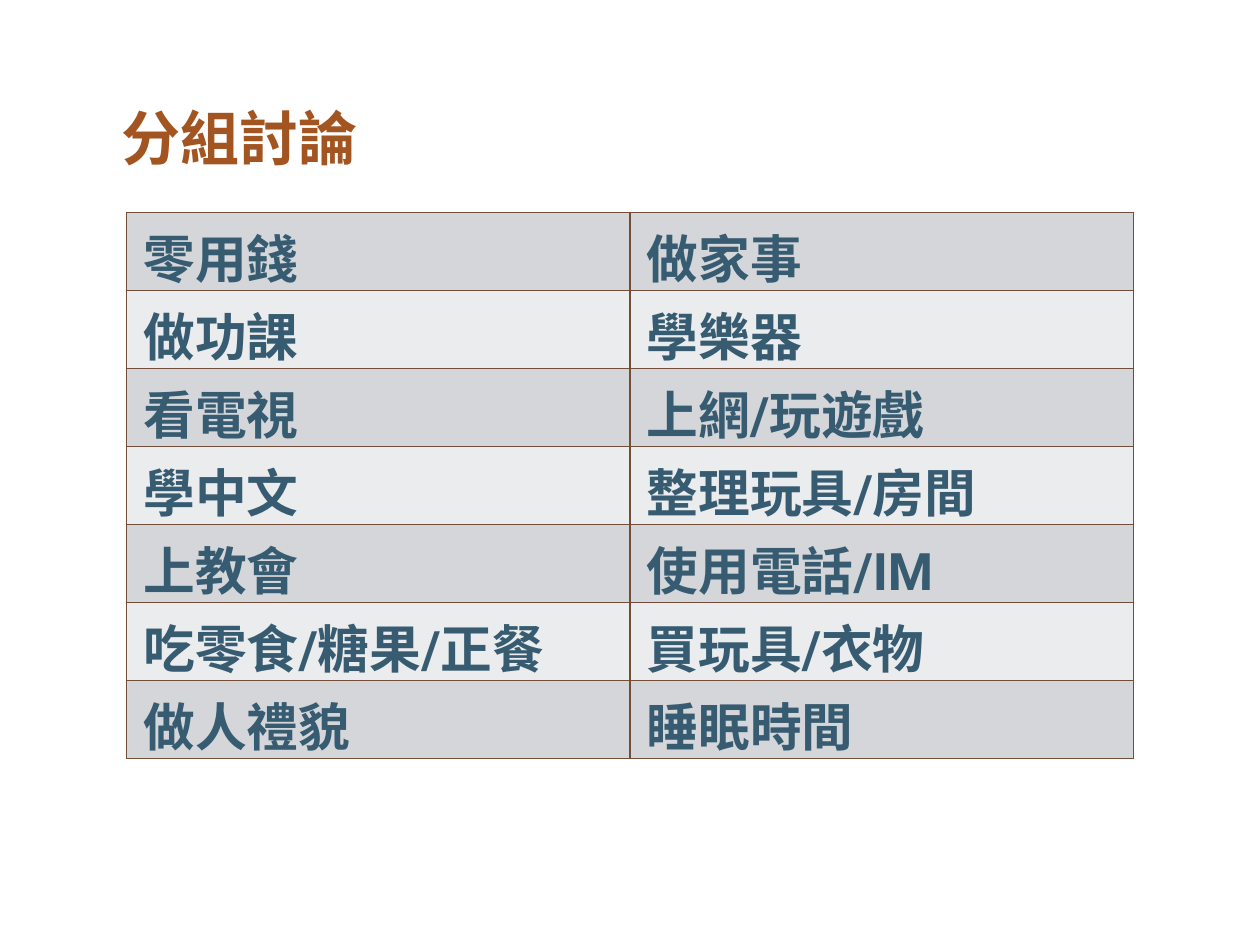
from dataclasses import dataclass

from lxml.etree import SubElement
from pptx import Presentation
from pptx.dml.color import RGBColor
from pptx.oxml.ns import qn
from pptx.slide import Slide
from pptx.table import _Cell
from pptx.text.text import _Paragraph
from pptx.util import Inches, Pt

FONT = "Roboto"
RUST = RGBColor(0xA3, 0x55, 0x21)
SLATE_BLUE = RGBColor(0x37, 0x5C, 0x71)
BROWN = RGBColor(0x71, 0x4D, 0x3A)
DARK_BAND = RGBColor(0xD4, 0xD6, 0xD9)
LIGHT_BAND = RGBColor(0xEB, 0xEC, 0xED)

COLUMN_WIDTH = Inches(5.68)
ROW_HEIGHT = Inches(0.88)
CELL_MARGIN = Inches(0.07)
FIRST_LINE_INDENT = Inches(0.12)


@dataclass(frozen=True)
class TopicPair:
    left: str
    right: str


TOPICS = [
    TopicPair("零用錢", "做家事"),
    TopicPair("做功課", "學樂器"),
    TopicPair("看電視", "上網/玩遊戲"),
    TopicPair("學中文", "整理玩具/房間"),
    TopicPair("上教會", "使用電話/IM"),
    TopicPair("吃零食/糖果/正餐", "買玩具/衣物"),
    TopicPair("做人禮貌", "睡眠時間"),
]


def write_bold(paragraph: _Paragraph, text: str, size: int, color: RGBColor) -> None:
    paragraph.text = text
    font = paragraph.runs[0].font
    font.name = FONT
    font.size = Pt(size)
    font.bold = True
    font.color.rgb = color


def add_title(slide: Slide) -> None:
    title = slide.shapes.add_textbox(Inches(1.37), Inches(1.15), Inches(2.68), Inches(0.66))
    frame = title.text_frame
    frame.word_wrap = False
    frame.margin_left = frame.margin_right = frame.margin_top = frame.margin_bottom = 0
    write_bold(frame.paragraphs[0], "分組討論", 48, RUST)


def add_borders(cell: _Cell) -> None:
    properties = cell._tc.get_or_add_tcPr()
    for side in ("lnL", "lnR", "lnT", "lnB"):
        line = SubElement(properties, qn(f"a:{side}"), w=str(Pt(1)))
        fill = SubElement(line, qn("a:solidFill"))
        SubElement(fill, qn("a:srgbClr"), val=str(BROWN))


def fill_cell(cell: _Cell, topic: str, band: RGBColor) -> None:
    cell.margin_left = cell.margin_right = CELL_MARGIN
    cell.margin_top = cell.margin_bottom = CELL_MARGIN
    add_borders(cell)
    cell.fill.solid()
    cell.fill.fore_color.rgb = band
    paragraph = cell.text_frame.paragraphs[0]
    write_bold(paragraph, topic, 42, SLATE_BLUE)
    paragraph_properties = paragraph._p.get_or_add_pPr()
    paragraph_properties.set("marL", "0")
    paragraph_properties.set("indent", str(FIRST_LINE_INDENT))


def add_topic_table(slide: Slide) -> None:
    table = slide.shapes.add_table(
        len(TOPICS), 2, Inches(1.43), Inches(2.4),
        2 * COLUMN_WIDTH, len(TOPICS) * ROW_HEIGHT,
    ).table
    table.first_row = False
    table.horz_banding = False
    for column in table.columns:
        column.width = COLUMN_WIDTH
    for index, pair in enumerate(TOPICS):
        table.rows[index].height = ROW_HEIGHT
        band = LIGHT_BAND if index % 2 else DARK_BAND
        fill_cell(table.cell(index, 0), pair.left, band)
        fill_cell(table.cell(index, 1), pair.right, band)


def main() -> None:
    presentation = Presentation()
    presentation.slide_width = Inches(14.22)
    presentation.slide_height = Inches(10.67)
    slide = presentation.slides.add_slide(presentation.slide_layouts[6])
    add_title(slide)
    add_topic_table(slide)
    presentation.save("out.pptx")


if __name__ == "__main__":
    main()
